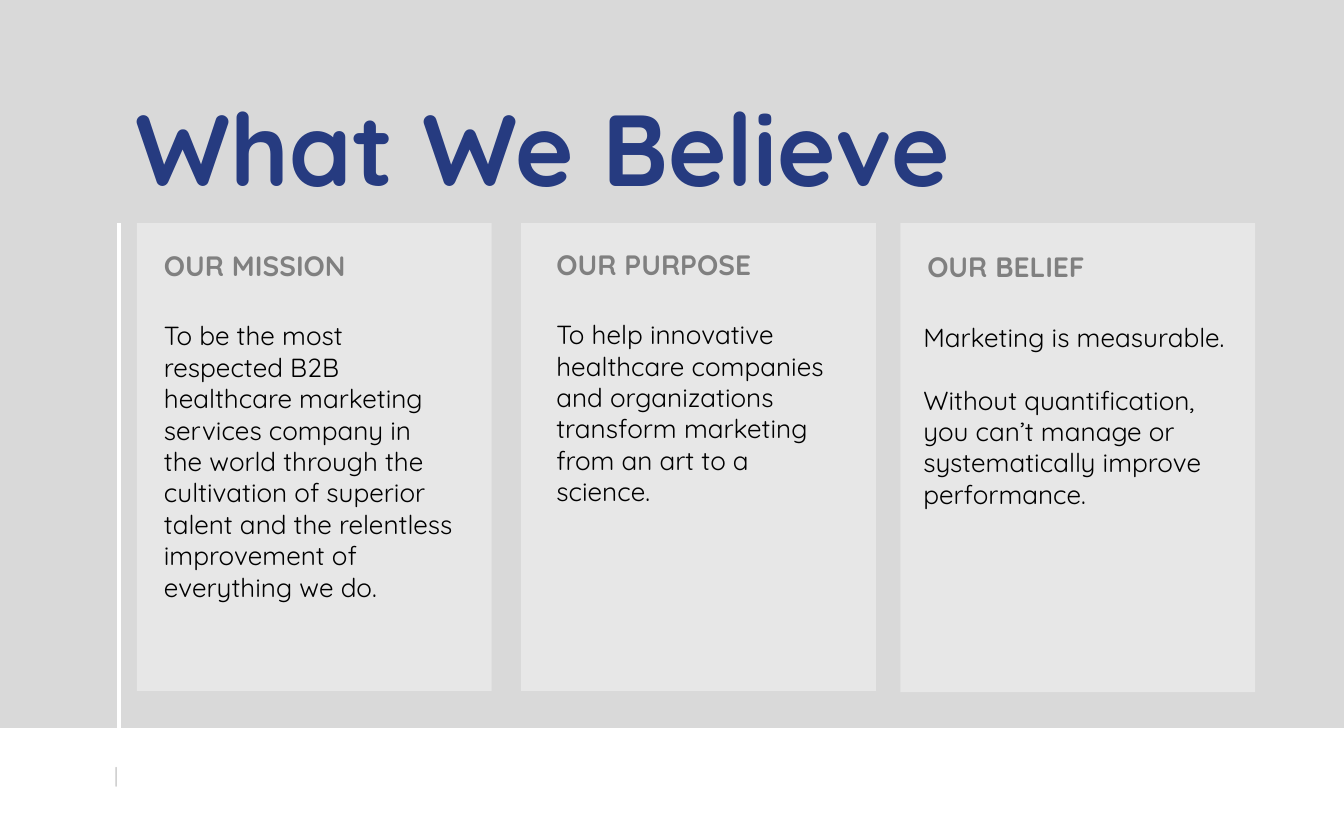
import pptx
import pptx.util
from lxml import etree
from pptx.dml.color import RGBColor
from pptx.enum.shapes import MSO_CONNECTOR, MSO_SHAPE
from pptx.enum.text import MSO_ANCHOR, MSO_AUTO_SIZE, PP_ALIGN
from pptx.oxml.ns import qn

Pt = pptx.util.Pt
FONT = "Quicksand"
WHITE = RGBColor(0xFF, 0xFF, 0xFF)
BLACK = RGBColor(0, 0, 0)
BACKDROP = RGBColor(0xD9, 0xD9, 0xD9)
MARK = RGBColor(0xBF, 0xBF, 0xBF)
GRAY = RGBColor(0x80, 0x80, 0x80)
NAVY = RGBColor(0x26, 0x3B, 0x80)

TITLE = "What We Believe"
CARD_TOP, CARD_W = 119.5, 190.1
HEAD_TO_BODY = 38.2
PARAGRAPH_GAP = 16.8

# Heading and body positions are (left, width); text_top is the heading's top.
CARDS = [
    dict(left=73.4, height=250.6, text_top=130.3,
         heading="OUR MISSION", head_at=(82.1, 109.4), body_at=(82.1, 167.8),
         body=["To be the most respected B2B healthcare marketing services "
               "company in the world through the cultivation of superior talent "
               "and the relentless improvement of everything we do."],
         body_h=158.4),
    dict(left=279.2, height=250.6, text_top=129.6,
         heading="OUR PURPOSE", head_at=(292.3, 126), body_at=(292.3, 167.8),
         body=["To help innovative healthcare companies and organizations "
               "transform marketing from an art to a science."],
         body_h=107.3),
    dict(left=482.4, height=251.3, text_top=131,
         heading="OUR BELIEF", head_at=(491, 109.4), body_at=(488.9, 182.9),
         body=["Marketing is measurable.",
               "Without quantification, you can’t manage or systematically "
               "improve performance."],
         body_h=107.3),
]

prs = pptx.Presentation()
prs.slide_width, prs.slide_height = Pt(720), Pt(450)
s = prs.slides.add_slide(prs.slide_layouts[5])


def add_rect(left, top, width, height, color, opacity=100):
    sp = s.shapes.add_shape(MSO_SHAPE.RECTANGLE, Pt(left), Pt(top), Pt(width), Pt(height))
    sp.shadow.inherit = False
    sp.fill.solid()
    sp.fill.fore_color.rgb = color
    sp.line.fill.background()
    if opacity < 100:
        clr = sp.fill._xPr.find(qn("a:solidFill"))[0]
        etree.SubElement(clr, qn("a:alpha")).set("val", str(opacity * 1000))


def write(tf, paragraphs, size, color, bold=False, wrap=True, inset=5.76):
    tf.word_wrap = wrap
    tf.auto_size = MSO_AUTO_SIZE.NONE
    tf.vertical_anchor = MSO_ANCHOR.TOP
    tf.margin_left, tf.margin_right = Pt(inset), Pt(5.76)
    tf.margin_top = tf.margin_bottom = Pt(2.88)
    for i, text in enumerate(paragraphs):
        p = tf.add_paragraph() if i else tf.paragraphs[0]
        p.alignment = PP_ALIGN.LEFT
        p.space_before = Pt(PARAGRAPH_GAP if i else 0)
        r = p.add_run()
        r.text = text
        r.font.name, r.font.size, r.font.bold = FONT, Pt(size), bold
        r.font.color.rgb = color


def add_text(left, top, width, height, *args, **kwargs):
    box = s.shapes.add_textbox(Pt(left), Pt(top), Pt(width), Pt(height))
    write(box.text_frame, *args, **kwargs)


add_rect(0, 0, 720, 390, BACKDROP)
add_text(55.4, 406, 18.7, 18.7, ["|"], 11, MARK, wrap=False)

rule = s.shapes.add_connector(MSO_CONNECTOR.STRAIGHT, Pt(63.6), Pt(391), Pt(63.6), Pt(119.7))
rule.line.color.rgb = WHITE
rule.line.width = Pt(2)
etree.SubElement(rule._element.spPr, qn("a:effectLst"))

for card in CARDS:
    add_rect(card["left"], CARD_TOP, CARD_W, card["height"], WHITE, opacity=38)
    top = card["text_top"]
    left, width = card["head_at"]
    add_text(left, top, width, 23.8, [card["heading"]], 15, GRAY, bold=True)
    left, width = card["body_at"]
    add_text(left, top + HEAD_TO_BODY, width, card["body_h"], card["body"], 14, BLACK)

title = s.shapes.title
title.left, title.top, title.width, title.height = Pt(72.7), Pt(43.2), Pt(578.9), Pt(67.7)
write(title.text_frame, [TITLE], 54, NAVY, bold=True, inset=0)
# Bring the title in front of the backdrop.
s.shapes._spTree.append(title._element)

prs.save("out.pptx")
